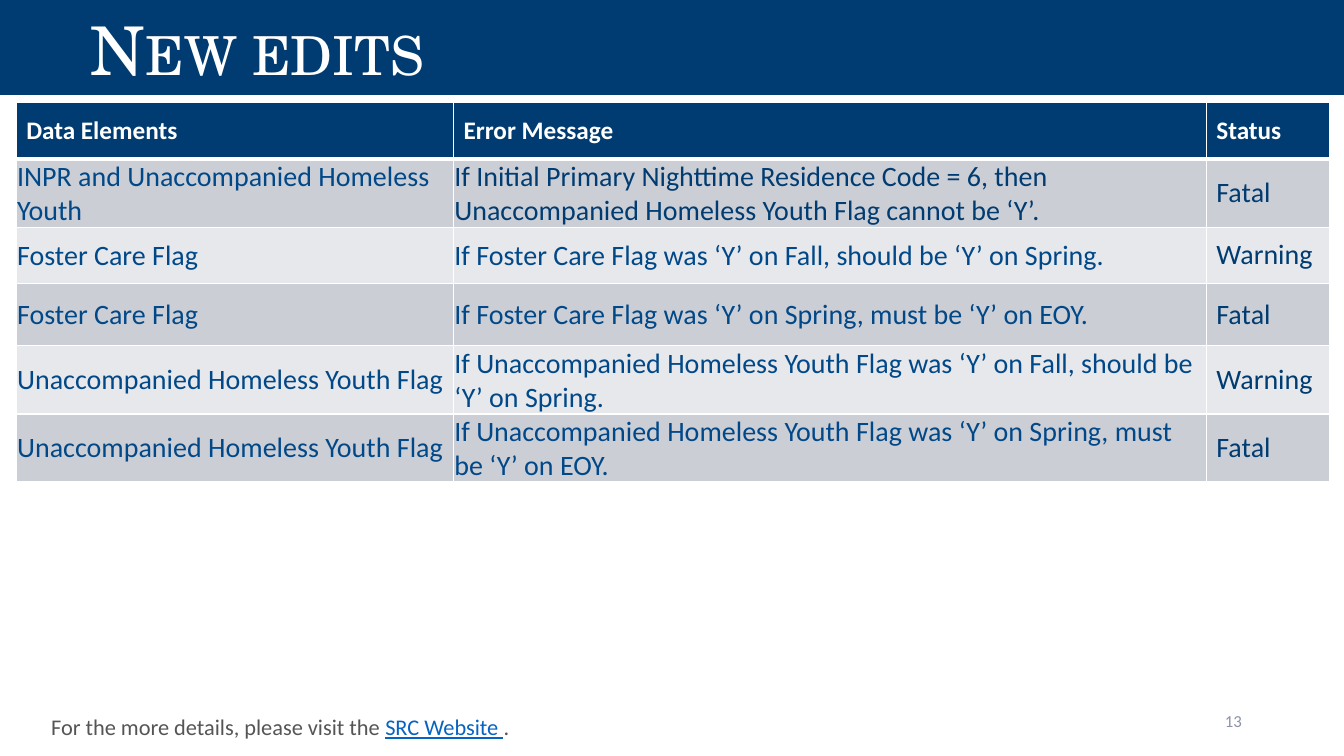
from dataclasses import dataclass

from lxml import etree
from pptx import Presentation
from pptx.dml.color import RGBColor
from pptx.enum.text import MSO_ANCHOR, MSO_AUTO_SIZE, PP_ALIGN
from pptx.oxml.ns import qn
from pptx.util import Cm, Pt

MIDDLE, BOTTOM = MSO_ANCHOR.MIDDLE, MSO_ANCHOR.BOTTOM
LEFT, RIGHT = PP_ALIGN.LEFT, PP_ALIGN.RIGHT
NO_FIT = MSO_AUTO_SIZE.NONE

NAVY = RGBColor(0x00, 0x3C, 0x71)
BLUE = RGBColor(0x01, 0x48, 0x88)
WHITE = RGBColor(0xFF, 0xFF, 0xFF)
GREY = RGBColor(0x55, 0x55, 0x55)
PALE_NAVY = RGBColor(0x8C, 0x92, 0xA5)
LINK = RGBColor(0x05, 0x63, 0xC1)
BANDS = (RGBColor(0xCC, 0xCE, 0xD5), RGBColor(0xE7, 0xE8, 0xEB))

BODY_FONT = "Calibri"
TITLE_FONT = "TeX Gyre Schola"


@dataclass
class Run:
    text: str
    size: float
    color: RGBColor
    font: str = BODY_FONT
    bold: bool = False
    underline: bool = False


@dataclass
class Note:
    left: float
    top: float
    width: float
    height: float
    align: PP_ALIGN
    runs: list[Run]


@dataclass
class Edit:
    element: str
    message: str
    status: str
    message_color: RGBColor = BLUE


HEADINGS = ("Data Elements", "Error Message", "Status")
EDITS = [
    Edit("INPR and Unaccompanied Homeless Youth",
         "If Initial Primary Nighttime Residence Code = 6, then "
         "Unaccompanied Homeless Youth Flag cannot be ‘Y’.", "Fatal", NAVY),
    Edit("Foster Care Flag",
         "If Foster Care Flag was ‘Y’ on Fall, should be ‘Y’ on Spring.", "Warning"),
    Edit("Foster Care Flag",
         "If Foster Care Flag was ‘Y’ on Spring, must be ‘Y’ on EOY.", "Fatal"),
    Edit("Unaccompanied Homeless Youth Flag",
         "If Unaccompanied Homeless Youth Flag was ‘Y’ on Fall, should be ‘Y’ on Spring.",
         "Warning"),
    Edit("Unaccompanied Homeless Youth Flag",
         "If Unaccompanied Homeless Youth Flag was ‘Y’ on Spring, must be ‘Y’ on EOY.",
         "Fatal"),
]
COL_WIDTHS = (11.02, 18.97, 3.1)
ROW_HEIGHTS = (1.42, 1.57, 1.42, 1.57, 1.57, 1.57)

NOTES = [
    Note(23.93, 17.65, 7.62, 1.02, RIGHT, [Run("13", 12, PALE_NAVY)]),
    Note(1.04, 17.81, 30.48, 1.02, LEFT, [
        Run("For the more details, please visit the ", 16, GREY),
        Run("SRC Website ", 16, LINK, underline=True),
        Run(".", 16, GREY),
    ]),
]


def add_run(p, run: Run):
    r = p.add_run()
    r.text = run.text
    f = r.font
    f.name, f.size, f.bold, f.underline = run.font, Pt(run.size), run.bold, run.underline
    f.color.rgb = run.color
    return r


def add_title(s) -> None:
    sp = s.shapes.title
    sp.left, sp.top, sp.width, sp.height = Cm(0), Cm(0), Cm(33.87), Cm(2.39)
    sp.fill.solid()
    sp.fill.fore_color.rgb = NAVY
    tf = sp.text_frame
    tf.auto_size = NO_FIT
    tf.vertical_anchor = BOTTOM
    tf.margin_left, tf.margin_right = Cm(2.29), Cm(0.25)
    tf.margin_top = tf.margin_bottom = Cm(0.13)
    p = tf.paragraphs[0]
    p.alignment = LEFT
    p.line_spacing = 0.9
    r = add_run(p, Run("New edits", 48, WHITE, TITLE_FONT))
    r.font._element.set("cap", "small")


def add_note(s, note: Note) -> None:
    sp = s.shapes.add_textbox(Cm(note.left), Cm(note.top), Cm(note.width), Cm(note.height))
    tf = sp.text_frame
    tf.word_wrap = True
    tf.vertical_anchor = MIDDLE
    p = tf.paragraphs[0]
    p.alignment = note.align
    for run in note.runs:
        add_run(p, run)


def set_borders(cell, top: float, bottom: float) -> None:
    tc_pr = cell._tc.get_or_add_tcPr()
    for side, width in (("L", 1), ("R", 1), ("T", top), ("B", bottom)):
        ln = etree.SubElement(tc_pr, qn(f"a:ln{side}"), w=str(Pt(width)))
        fill = etree.SubElement(ln, qn("a:solidFill"))
        etree.SubElement(fill, qn("a:srgbClr"), val=str(WHITE))


def fill_cell(cell, run: Run, fill: RGBColor, top: float, bottom: float, tight: bool) -> None:
    set_borders(cell, top, bottom)
    cell.fill.solid()
    cell.fill.fore_color.rgb = fill
    cell.vertical_anchor = MIDDLE
    if tight:
        cell.margin_left = cell.margin_right = cell.margin_top = Cm(0.02)
        cell.margin_bottom = Cm(0)
    add_run(cell.text_frame.paragraphs[0], run)


def add_edits_table(s) -> None:
    frame = s.shapes.add_table(len(ROW_HEIGHTS), len(COL_WIDTHS), Cm(0.41), Cm(2.59),
                               Cm(sum(COL_WIDTHS)), Cm(sum(ROW_HEIGHTS)))
    table = frame.table
    for col, width in zip(table.columns, COL_WIDTHS):
        col.width = Cm(width)
    for row, height in zip(table.rows, ROW_HEIGHTS):
        row.height = Cm(height)
    for c, heading in enumerate(HEADINGS):
        fill_cell(table.cell(0, c), Run(heading, 18, WHITE, bold=True), NAVY, 1, 3, False)
    for i, edit in enumerate(EDITS):
        runs = (Run(edit.element, 20, BLUE),
                Run(edit.message, 20, edit.message_color),
                Run(edit.status, 20, NAVY))
        for c, run in enumerate(runs):
            fill_cell(table.cell(i + 1, c), run, BANDS[i % 2], 1 if i else 3, 1, c < 2)


def main() -> None:
    prs = Presentation()
    prs.slide_width, prs.slide_height = Cm(33.87), Cm(19.05)
    s = prs.slides.add_slide(prs.slide_layouts[5])
    add_title(s)
    for note in NOTES:
        add_note(s, note)
    add_edits_table(s)
    prs.save("out.pptx")


if __name__ == "__main__":
    main()
